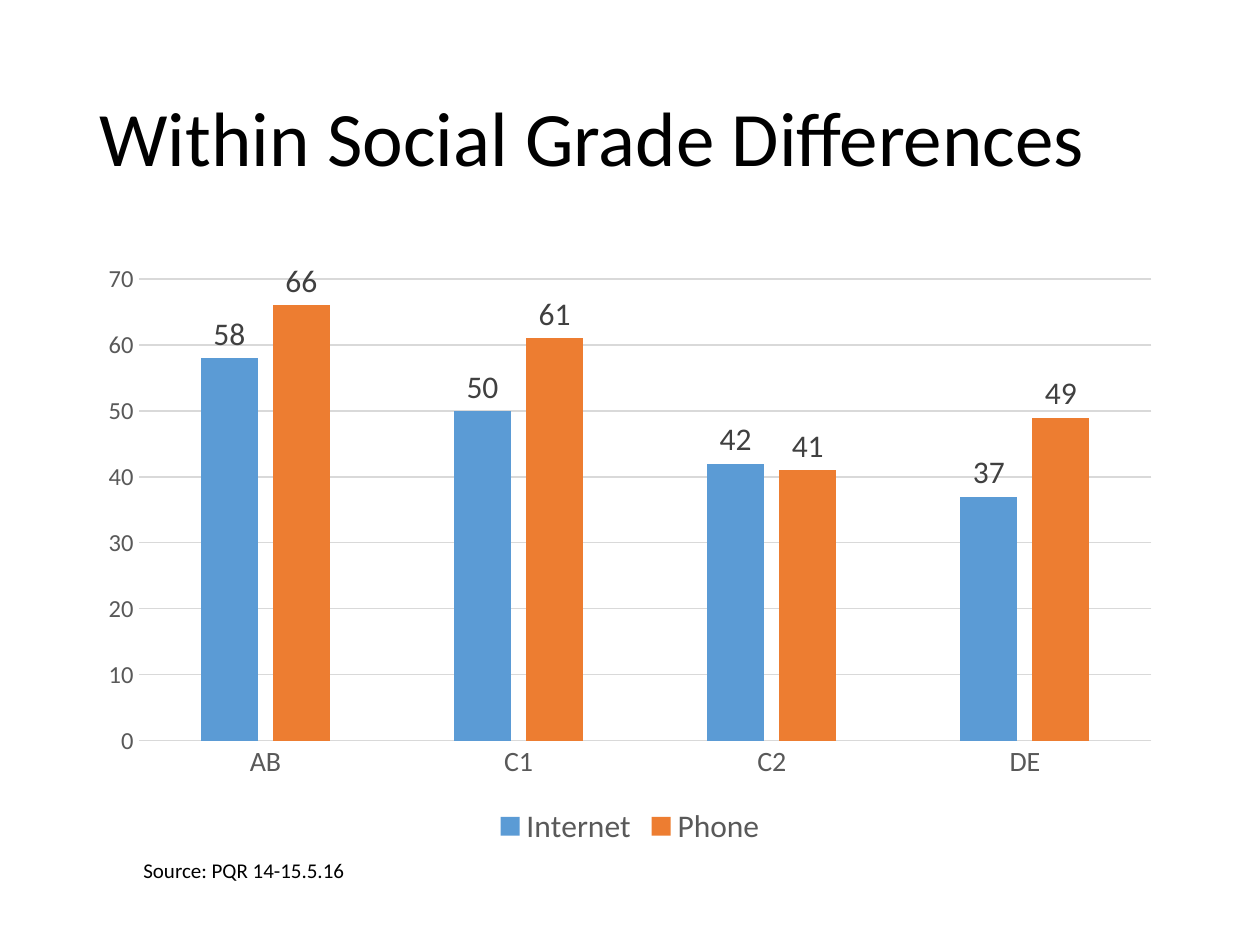
import pptx
import pptx.chart.data
import pptx.dml.color
import pptx.enum.chart
import pptx.enum.text
import pptx.util
from pptx.util import Cm

TITLE = "Within Social Grade Differences"
SOURCE = "Source: PQR 14-15.5.16"
GRADES = ["AB", "C1", "C2", "DE"]
SERIES = [
    ("Internet", [58, 50, 42, 37], "blue"),
    ("Phone", [66, 61, 41, 49], "orange"),
]
COLORS = {
    "black": "000000",
    "blue": "5B9BD5",
    "orange": "ED7D31",
    "grid": "D9D9D9",
    "axis": "595959",
    "label": "404040",
}
FONT = "Calibri"
LEFT, WIDTH = Cm(1.75), Cm(21.9)


def rgb(name):
    return pptx.dml.color.RGBColor.from_string(COLORS[name])


def set_font(font, size, color):
    font.name = FONT
    font.size = pptx.util.Pt(size)
    font.bold = False
    font.color.rgb = rgb(color)


def set_line(line, color):
    line.color.rgb = rgb(color)
    line.width = pptx.util.Pt(0.75)


def write(sp, text, size, color="black", anchor="TOP", spacing=1.0):
    tf = sp.text_frame
    tf.word_wrap = True
    tf.vertical_anchor = pptx.enum.text.MSO_ANCHOR[anchor]
    p = tf.paragraphs[0]
    p.alignment = pptx.enum.text.PP_ALIGN.LEFT
    p.line_spacing = spacing
    r = p.add_run()
    r.text = text
    set_font(r.font, size, color)
    return tf


def add_grade_chart(s):
    data = pptx.chart.data.CategoryChartData()
    data.categories = GRADES
    for name, values, _ in SERIES:
        data.add_series(name, values)
    chart = s.shapes.add_chart(
        pptx.enum.chart.XL_CHART_TYPE.COLUMN_CLUSTERED,
        LEFT, Cm(5.08), WIDTH, Cm(12.09), data).chart
    set_font(chart.font, 10, "black")
    chart.has_title = False

    chart.has_legend = True
    chart.legend.position = pptx.enum.chart.XL_LEGEND_POSITION.BOTTOM
    chart.legend.include_in_layout = False
    set_font(chart.legend.font, 18, "axis")

    for axis, size in ((chart.category_axis, 16), (chart.value_axis, 14)):
        axis.major_tick_mark = pptx.enum.chart.XL_TICK_MARK.NONE
        axis.minor_tick_mark = pptx.enum.chart.XL_TICK_MARK.NONE
        set_font(axis.tick_labels.font, size, "axis")
    set_line(chart.category_axis.format.line, "grid")
    chart.value_axis.format.line.fill.background()
    set_line(chart.value_axis.major_gridlines.format.line, "grid")

    plot = chart.plots[0]
    plot.gap_width, plot.overlap = 219, -27
    plot.vary_by_categories = False
    for series, (_, _, color) in zip(plot.series, SERIES):
        series.format.fill.solid()
        series.format.fill.fore_color.rgb = rgb(color)
        series.invert_if_negative = False
        labels = series.data_labels
        labels.show_value = True
        labels.position = pptx.enum.chart.XL_LABEL_POSITION.OUTSIDE_END
        set_font(labels.font, 18, "label")


def main():
    prs = pptx.Presentation()
    prs.slide_width, prs.slide_height = Cm(25.4), Cm(19.05)
    s = prs.slides.add_slide(prs.slide_layouts[5])

    title = s.shapes.title
    title.left, title.top, title.width, title.height = LEFT, Cm(1.01), WIDTH, Cm(3.68)
    write(title, TITLE, 44, anchor="MIDDLE", spacing=0.9)

    add_grade_chart(s)

    source = s.shapes.add_textbox(Cm(2.64), Cm(17.17), Cm(10.34), Cm(0.77))
    tf = write(source, SOURCE, 12)
    tf.auto_size = pptx.enum.text.MSO_AUTO_SIZE.SHAPE_TO_FIT_TEXT

    prs.save("out.pptx")


if __name__ == "__main__":
    main()
